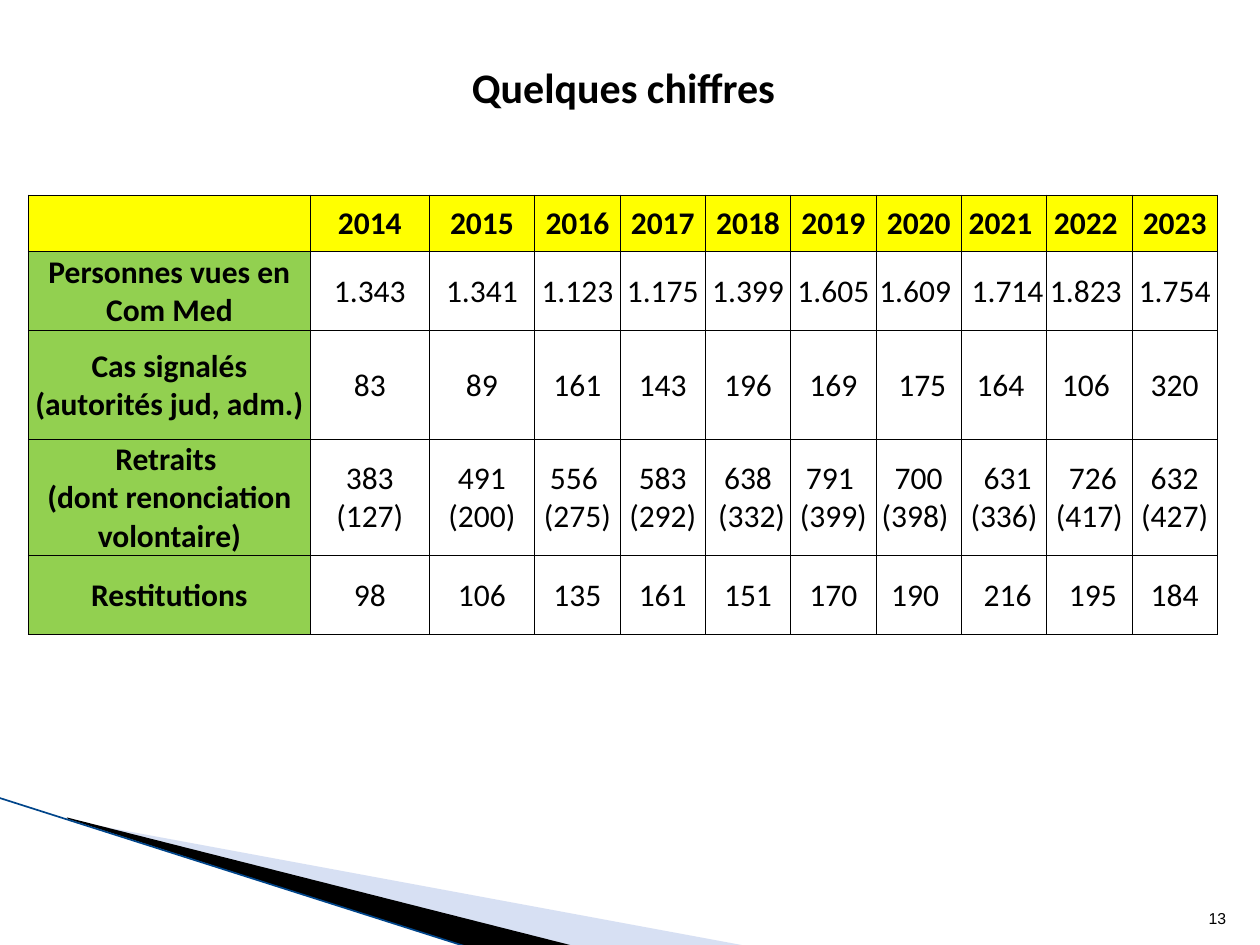
from lxml import etree
from pptx import Presentation
from pptx import util as u
from pptx.dml.color import RGBColor
from pptx.enum import shapes, text
from pptx.oxml import ns

Cm, Pt = u.Cm, u.Pt
BLACK = RGBColor(0x00, 0x00, 0x00)
YELLOW = RGBColor(0xFF, 0xFF, 0x00)
GREEN = RGBColor(0x92, 0xD0, 0x50)
PALE_BLUE = RGBColor(0x9D, 0xB2, 0xE1)
DARK_BLUE = RGBColor(0x00, 0x45, 0x8A)

HEADING = {"name": "Calibri", "size": Pt(24), "bold": True}
LABEL = {"name": "Calibri", "size": Pt(18), "bold": True}
FIGURE = {"name": "Calibri", "size": Pt(18), "bold": False}
NUMBER = {"name": "Arial", "size": Pt(9), "bold": False}

CELL_FRAME = {
    "vertical_anchor": text.MSO_ANCHOR.MIDDLE,
    "margin_left": Cm(0.03), "margin_right": Cm(0.03),
    "margin_top": Cm(0.03), "margin_bottom": 0,
}
COLUMN_WIDTHS = [5.69, 2.39, 2.13] + [1.72] * 8
ROW_HEIGHTS = [1.14, 1.6, 2.18, 2.34, 1.6]
# \v breaks a line, \n starts a paragraph
ROWS = [
    ["", "2014", "2015", "2016", "2017", "2018", "2019", "2020",
     "2021 ", "2022 ", "2023"],
    ["Personnes vues en Com Med", "1.343", "1.341", "1.123", "1.175", "1.399",
     "1.605", "1.609 ", " 1.714", "1.823 ", "1.754"],
    ["Cas signalés\v(autorités jud, adm.)", "83", "89", "161", "143", "196",
     "169", " 175", "164 ", "106 ", "320"],
    ["Retraits \v(dont renonciation volontaire)", "383\v(127)", "491\v(200)",
     "556 \v(275)", "583\v(292)", "638\v (332)", "791 \v(399)",
     "700\n(398) ", " 631\v(336)", " 726\n(417)", "632\n(427)"],
    ["Restitutions", "98", "106", "135", "161", "151", "170", "190 ",
     " 216", " 195", "184"],
]


def set_attributes(target, values):
    for name, value in values.items():
        setattr(target, name, value)


def write_centred(frame, content, font_format):
    frame.text = content
    for paragraph in frame.paragraphs:
        paragraph.alignment = text.PP_ALIGN.CENTER
        for run in paragraph.runs:
            set_attributes(run.font, font_format)
            run.font.color.rgb = BLACK


def add_label(slide, box, content, font_format, anchor):
    label = slide.shapes.add_textbox(*map(Cm, box))
    set_attributes(label.text_frame,
                   {"word_wrap": True, "vertical_anchor": anchor})
    write_centred(label.text_frame, content, font_format)


def add_wedge(slide, box, points, color, opacity=None):
    left, top = box[:2]
    corners = [(Cm(left + x), Cm(top + y)) for x, y in points]
    builder = slide.shapes.build_freeform(*corners[0])
    builder.add_line_segments(corners[1:], close=True)
    wedge = builder.convert_to_shape()
    wedge.shadow.inherit = False
    wedge.fill.solid()
    wedge.fill.fore_color.rgb = color
    wedge.line.fill.background()
    if opacity is not None:
        fill_color = wedge.fill._xPr.find(".//" + ns.qn("a:srgbClr"))
        etree.SubElement(fill_color, ns.qn("a:alpha"), val=str(opacity * 1000))


def add_corner(slide, box):
    left, top, width, height = box
    # Pale and black wedges
    add_wedge(slide, box, [(1.4, 0.46), (15.11, 3), (11.58, 3), (1.4, 0.43)],
              PALE_BLUE, opacity=40)
    add_wedge(slide, box, [(1.35, 0.4), (11.61, 3), (9.45, 3.02), (1.37, 0.43)],
              BLACK)
    # Diagonal edge
    edge = slide.shapes.add_connector(
        shapes.MSO_CONNECTOR.STRAIGHT, Cm(left - 0.03), Cm(top),
        Cm(left + 9.45), Cm(top + height))
    edge.line.color.rgb = DARK_BLUE
    edge.line.width = Pt(0.95)
    etree.SubElement(edge._element.spPr, ns.qn("a:effectLst"))


def add_borders(cell):
    properties = cell._tc.get_or_add_tcPr()
    for index, side in enumerate(("lnL", "lnR", "lnT", "lnB")):
        border = etree.Element(ns.qn("a:" + side), w=str(Pt(0.5)))
        fill = etree.SubElement(border, ns.qn("a:solidFill"))
        etree.SubElement(fill, ns.qn("a:srgbClr"), val=str(BLACK))
        properties.insert(index, border)


def fill_cell(cell, content, row, column):
    set_attributes(cell, CELL_FRAME)
    is_label = row == 0 or column == 0
    write_centred(cell.text_frame, content, LABEL if is_label else FIGURE)
    if is_label:
        cell.fill.solid()
        cell.fill.fore_color.rgb = YELLOW if row == 0 else GREEN
    else:
        cell.fill.background()
    add_borders(cell)


def add_figures(slide, box):
    table = slide.shapes.add_table(
        len(ROWS), len(COLUMN_WIDTHS), *map(Cm, box)).table
    set_attributes(table, {"first_row": False, "horz_banding": False})
    for column, width in zip(table.columns, COLUMN_WIDTHS):
        column.width = Cm(width)
    for row, height in zip(table.rows, ROW_HEIGHTS):
        row.height = Cm(height)
    for row, contents in enumerate(ROWS):
        for column, content in enumerate(contents):
            fill_cell(table.cell(row, column), content, row, column)


def main():
    presentation = Presentation()
    presentation.slide_width, presentation.slide_height = Cm(25.4), Cm(19.05)
    slide = presentation.slides.add_slide(presentation.slide_layouts[6])
    add_corner(slide, (0, 16.08, 15.11, 3.02))
    add_label(slide, (24.03, 17.81, 1.02, 1.02), "13", NUMBER,
              text.MSO_ANCHOR.BOTTOM)
    add_figures(slide, (0.57, 3.93, 24, 8.86))
    add_label(slide, (0.57, 1.12, 24, 1.27), "Quelques chiffres", HEADING,
              text.MSO_ANCHOR.TOP)
    presentation.save("out.pptx")


if __name__ == "__main__":
    main()
